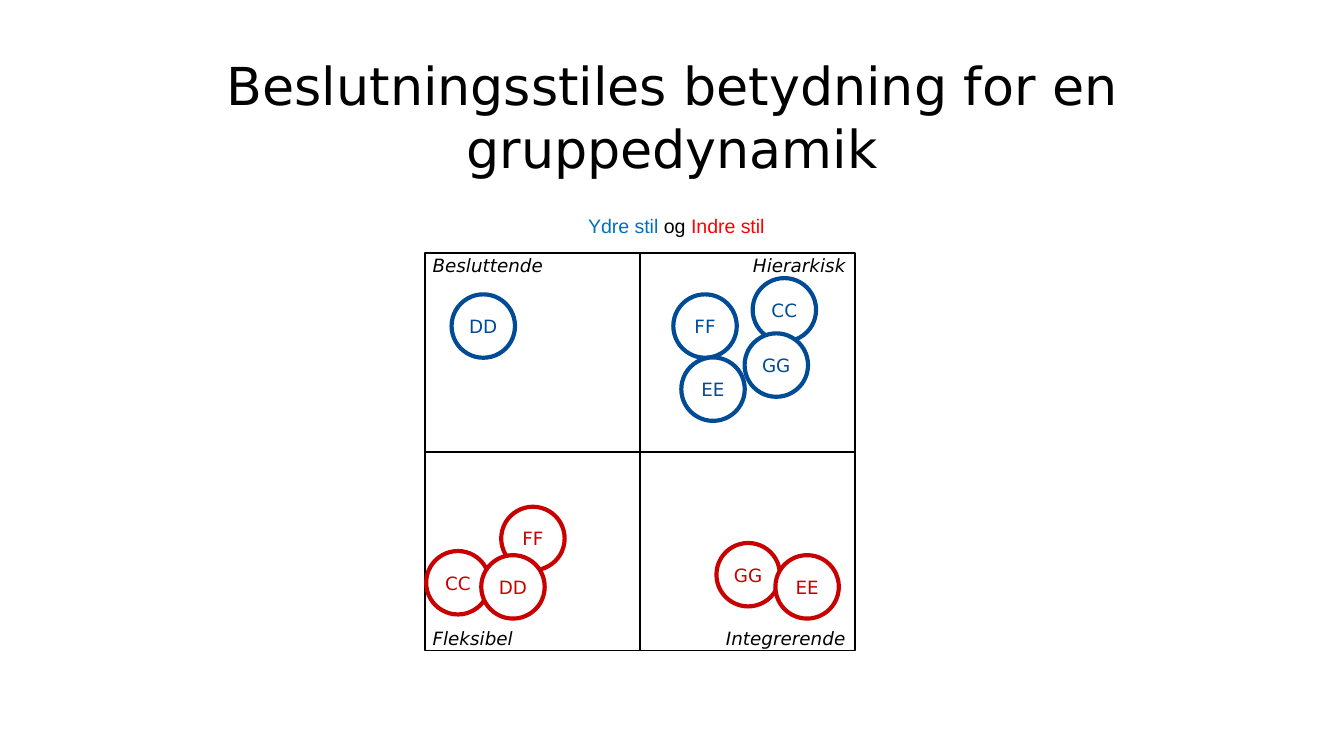
"""Builds a slide that places group members in a matrix of decision styles."""
from dataclasses import dataclass
from itertools import product

from pptx import Presentation
from pptx import util as u
from pptx.dml.color import RGBColor
from pptx.enum import shapes, text
from pptx.slide import Slide

BLACK = RGBColor(0x00, 0x00, 0x00)
WHITE = RGBColor(0xFF, 0xFF, 0xFF)
OUTER = RGBColor(0x00, 0x4B, 0x96)
INNER = RGBColor(0xC8, 0x00, 0x00)
OUTER_WORD = RGBColor(0x00, 0x70, 0xC0)
INNER_WORD = RGBColor(0xFF, 0x00, 0x00)

LEFT, RIGHT, CENTER = text.PP_ALIGN.LEFT, text.PP_ALIGN.RIGHT, text.PP_ALIGN.CENTER
TOP, MIDDLE = text.MSO_ANCHOR.TOP, text.MSO_ANCHOR.MIDDLE

MATRIX_X, MATRIX_Y = 227.5, 135.5
CELL_W, CELL_H = 115.2, 106.5
LABEL_W, LABEL_H = 103.7, 17.3
MEMBER_SIZE = 34

OUTER_MEMBERS = [("FF", 360.7, 157.7), ("DD", 241.9, 157.7), ("EE", 365, 191.5),
                 ("CC", 403.2, 149), ("GG", 398.9, 178.6)]
INNER_MEMBERS = [("FF", 268.5, 271.5), ("GG", 383.8, 290.9), ("EE", 415.4, 297.4),
                 ("CC", 228.3, 295.2), ("DD", 257.8, 297.4)]
STYLES = [("Besluttende", 226, 133.2, LEFT), ("Fleksibel", 226, 333.4, LEFT),
          ("Hierarkisk", 355, 133.2, RIGHT), ("Integrerende", 355, 333.4, RIGHT)]


def write(frame, runs, font="DejaVu Sans", size=9.8, italic=False, align=LEFT,
          anchor=TOP, wrap=True, inset=(5.76, 2.88)):
    """Fill a text frame with (words, colour) runs in one format."""
    frame.word_wrap = wrap
    frame.vertical_anchor = anchor
    frame.margin_left = frame.margin_right = u.Pt(inset[0])
    frame.margin_top = frame.margin_bottom = u.Pt(inset[1])
    paragraph = frame.paragraphs[0]
    paragraph.alignment = align
    for words, color in runs:
        run = paragraph.add_run()
        run.text = words
        run.font.name = font
        run.font.size = u.Pt(size)
        run.font.italic = italic
        run.font.color.rgb = color


@dataclass
class StyleSlide:
    """Holds the current slide and draws its elements."""
    slide: Slide
    border: float = 1
    ring: float = 2.25

    def text(self, runs, x, y, w, h, **form):
        """Add a text box."""
        box = self.slide.shapes.add_textbox(u.Pt(x), u.Pt(y), u.Pt(w), u.Pt(h))
        write(box.text_frame, runs, **form)

    def outline(self, kind, x, y, w, h, color, weight):
        """Add a shape with a line and no shadow."""
        shape = self.slide.shapes.add_shape(kind, u.Pt(x), u.Pt(y), u.Pt(w), u.Pt(h))
        shape.shadow.inherit = False
        shape.line.color.rgb = color
        shape.line.width = u.Pt(weight)
        return shape

    def quadrant(self, column, row):
        """Add one cell of the matrix."""
        cell = self.outline(shapes.MSO_SHAPE.RECTANGLE, MATRIX_X + column * CELL_W,
                            MATRIX_Y + row * CELL_H, CELL_W, CELL_H, BLACK, self.border)
        cell.fill.background()

    def member(self, initials, x, y, color):
        """Add a circle for one group member."""
        circle = self.outline(shapes.MSO_SHAPE.OVAL, x, y, MEMBER_SIZE, MEMBER_SIZE,
                              color, self.ring)
        circle.fill.solid()
        circle.fill.fore_color.rgb = WHITE
        write(circle.text_frame, [(initials, color)], align=CENTER, anchor=MIDDLE, wrap=False)


def main():
    """Build and save the presentation."""
    deck = Presentation()
    deck.slide_width, deck.slide_height = u.Pt(720), u.Pt(405)
    page = StyleSlide(deck.slides.add_slide(deck.slide_layouts[6]))

    page.text([("Beslutningsstiles betydning for en gruppedynamik", BLACK)],
              31, 28.5, 658, 53.3, size=28, align=CENTER, inset=(0, 0))
    for row, column in product(range(2), repeat=2):
        page.quadrant(column, row)
    for style, x, y, align in STYLES:
        page.text([(style, BLACK)], x, y, LABEL_W, LABEL_H, italic=True, align=align)
    for member in OUTER_MEMBERS:
        page.member(*member, OUTER)
    page.text([("Ydre stil ", OUTER_WORD), ("og ", BLACK), ("Indre stil", INNER_WORD)],
              308, 111, 111, 20, font="Arial", size=10.5, wrap=False, inset=(7.2, 3.6))
    for member in INNER_MEMBERS:
        page.member(*member, INNER)

    deck.save("out.pptx")


if __name__ == "__main__":
    main()
